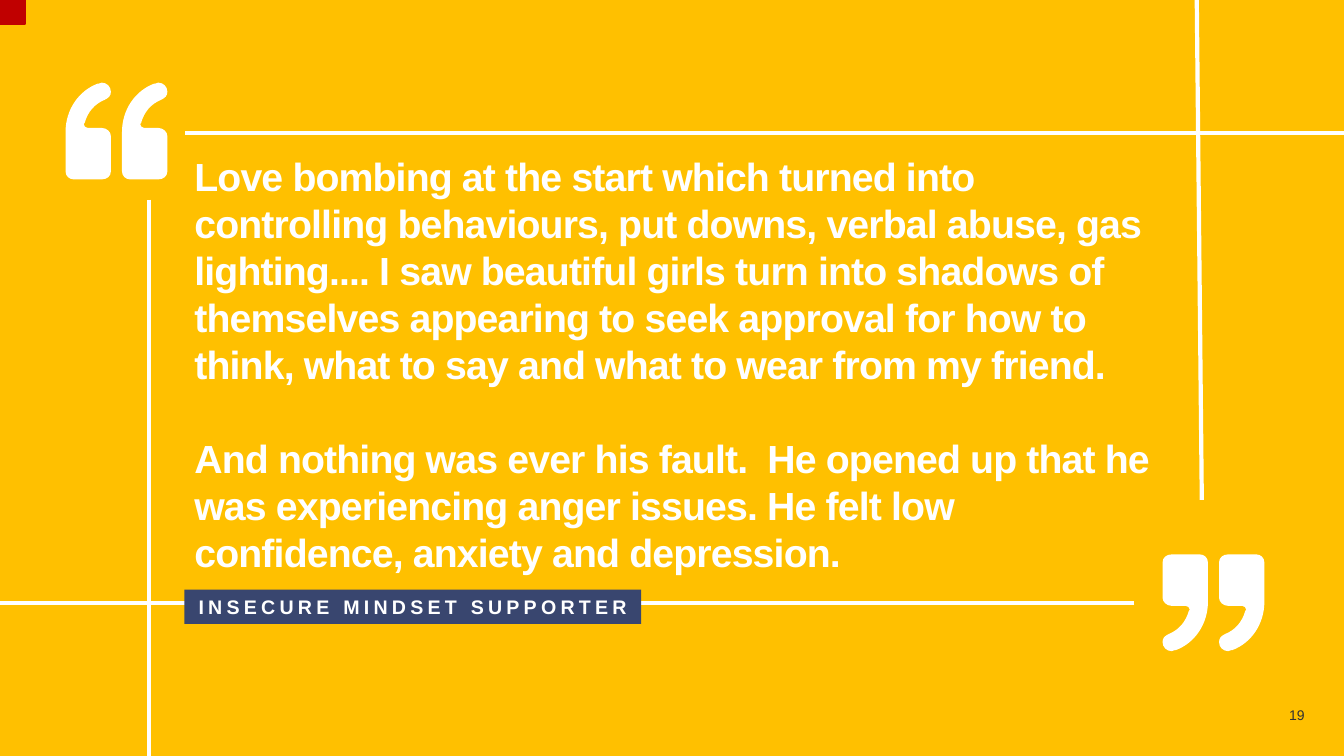
from dataclasses import dataclass

from lxml.etree import SubElement
from pptx import Presentation
from pptx.dml.color import RGBColor
from pptx.enum.shapes import MSO_CONNECTOR, MSO_SHAPE
from pptx.enum.text import MSO_ANCHOR, PP_ALIGN
from pptx.oxml.ns import qn
from pptx.shapes.autoshape import Shape
from pptx.slide import Slide
from pptx.util import Inches, Pt

AMBER = RGBColor(0xFF, 0xC0, 0x00)
WHITE = RGBColor(0xFF, 0xFF, 0xFF)
NAVY = RGBColor(0x39, 0x46, 0x6F)
RED = RGBColor(0xC0, 0x00, 0x00)
CHARCOAL = RGBColor(0x33, 0x33, 0x33)

WIDTH, HEIGHT = 13.33, 7.5
QUOTE_SIZE = 28
QUOTE_LEADING = QUOTE_SIZE * 1.2

Point = tuple[float, float]


@dataclass(frozen=True)
class Area:
    left: float
    top: float
    width: float
    height: float

    def lengths(self) -> list[int]:
        return [Inches(side) for side in (self.left, self.top, self.width, self.height)]


@dataclass(frozen=True)
class Rule:
    start: Point
    end: Point


@dataclass(frozen=True)
class QuoteMark:
    left: float
    top: float
    rotation: float


RULES = [
    Rule((11.87, 0), (11.92, 4.96)),
    Rule((1.48, 1.98), (1.48, HEIGHT)),
    Rule((WIDTH, 1.32), (1.83, 1.32)),
    Rule((11.25, 5.98), (0, 5.98)),
]
QUOTE_MARKS = [QuoteMark(0.65, 0.82, 0), QuoteMark(11.53, 5.5, 180)]
COMMA_GAP = 0.56

# One comma of a quote mark: one point is a line, three points are a curve
COMMA_START = (0, 0.88)
COMMA_STEPS = [
    [(0, 0.93), (0.04, 0.96), (0.08, 0.96)],
    [(0.36, 0.96)],
    [(0.41, 0.96), (0.45, 0.93), (0.45, 0.88)],
    [(0.45, 0.53)],
    [(0.45, 0.49), (0.41, 0.45), (0.36, 0.45)],
    [(0.22, 0.45)],
    [(0.2, 0.45), (0.18, 0.43), (0.18, 0.41)],
    [(0.18, 0.4), (0.19, 0.4), (0.19, 0.4)],
    [(0.22, 0.29), (0.29, 0.21), (0.39, 0.17)],
    [(0.43, 0.15), (0.45, 0.13), (0.45, 0.09)],
    [(0.45, 0.04), (0.41, 0), (0.36, 0)],
    [(0.35, 0), (0.34, 0), (0.33, 0.01)],
    [(0.32, 0.01)],
    [(0.13, 0.08), (0, 0.27), (0, 0.49)],
    [COMMA_START],
]

QUOTE = [
    "Love bombing at the start which turned into controlling behaviours, put downs, "
    "verbal abuse, gas lighting.... I saw beautiful girls turn into shadows of "
    "themselves appearing to seek approval for how to think, what to say and what "
    "to wear from my friend.",
    "And nothing was ever his fault.  He opened up that he was experiencing anger "
    "issues. He felt low confidence, anxiety and depression.",
]


def paint(shape: Shape, color: RGBColor) -> None:
    shape.shadow.inherit = False
    shape.fill.solid()
    shape.fill.fore_color.rgb = color
    shape.line.fill.background()


def add_block(page: Slide, area: Area, color: RGBColor) -> Shape:
    block = page.shapes.add_shape(MSO_SHAPE.RECTANGLE, *area.lengths())
    paint(block, color)
    return block


def add_rule(page: Slide, rule: Rule) -> None:
    ends = [Inches(value) for value in (*rule.start, *rule.end)]
    line = page.shapes.add_connector(MSO_CONNECTOR.STRAIGHT, *ends)
    line.line.color.rgb = WHITE
    line.line.width = Pt(3)
    SubElement(line._element.spPr, qn("a:effectLst"))


def bend_curves(shape: Shape) -> None:
    """Join the line segments of each three-point step into one cubic curve."""
    segments = iter(list(shape._element.iter(qn("a:lnTo"))))
    for step in COMMA_STEPS * 2:
        lines = [next(segments) for _ in step]
        if len(lines) == 3:
            curve = lines[0]
            curve.tag = qn("a:cubicBezTo")
            for line in lines[1:]:
                curve.append(line[0])
                line.getparent().remove(line)


def add_quote_mark(page: Slide, mark: QuoteMark) -> None:
    outline = [COMMA_START, *(point for step in COMMA_STEPS for point in step)]
    first, second = [
        [(Inches(mark.left + shift + x), Inches(mark.top + y)) for x, y in outline]
        for shift in (0, COMMA_GAP)
    ]
    builder = page.shapes.build_freeform(*first[0])
    builder.add_line_segments(first[1:], close=True)
    builder.move_to(*second[0])
    builder.add_line_segments(second[1:], close=True)
    shape = builder.convert_to_shape()
    bend_curves(shape)
    paint(shape, WHITE)
    shape.rotation = mark.rotation


def write(box: Shape, texts: list[str], *, size: float, color: RGBColor = WHITE,
          bold: bool = False, spacing: float = 0, align: PP_ALIGN = PP_ALIGN.LEFT,
          leading: float | None = None, gap: float = 0, wrap: bool = True,
          anchor: MSO_ANCHOR = MSO_ANCHOR.TOP, margin: float | None = None) -> None:
    frame = box.text_frame
    frame.word_wrap = wrap
    frame.vertical_anchor = anchor
    if margin is not None:
        frame.margin_left = frame.margin_right = Inches(margin)
        frame.margin_top = frame.margin_bottom = Inches(margin)
    for index, text in enumerate(texts):
        para = frame.add_paragraph() if index else frame.paragraphs[0]
        para.alignment = align
        if leading:
            para.line_spacing = Pt(leading)
        if index:
            para.space_before = Pt(gap)
        span = para.add_run()
        span.text = text
        span.font.name = "Arial"
        span.font.size = Pt(size)
        span.font.bold = bold
        span.font.color.rgb = color
        if spacing:
            span.font._element.set("spc", str(round(spacing * 100)))


def main() -> None:
    deck = Presentation()
    deck.slide_width, deck.slide_height = Inches(WIDTH), Inches(HEIGHT)
    page = deck.slides.add_slide(deck.slide_layouts[6])

    # Backdrop, rules and quote marks
    add_block(page, Area(0, 0, WIDTH, HEIGHT), AMBER)
    for rule in RULES:
        add_rule(page, rule)
    for mark in QUOTE_MARKS:
        add_quote_mark(page, mark)

    # Quotation and its speaker
    quote_box = page.shapes.add_textbox(*Area(1.83, 1.46, 9.84, 4.34).lengths())
    write(quote_box, QUOTE, size=QUOTE_SIZE, bold=True, spacing=-0.6,
          leading=QUOTE_LEADING, gap=QUOTE_LEADING)
    speaker = add_block(page, Area(1.83, 5.85, 4.53, 0.34), NAVY)
    write(speaker, ["INSECURE MINDSET SUPPORTER"], size=14, bold=True, spacing=3,
          align=PP_ALIGN.CENTER, wrap=False)

    # Page number and corner tab
    number_box = page.shapes.add_textbox(*Area(12.56, 6.99, 0.38, 0.21).lengths())
    write(number_box, ["19"], size=10, color=CHARCOAL, align=PP_ALIGN.RIGHT,
          anchor=MSO_ANCHOR.MIDDLE, margin=0)
    tab = add_block(page, Area(0, 0, 0.25, 0.24), RED)
    tab.line.color.rgb = RED
    tab.line.width = Pt(1)

    deck.save("out.pptx")


if __name__ == "__main__":
    main()
